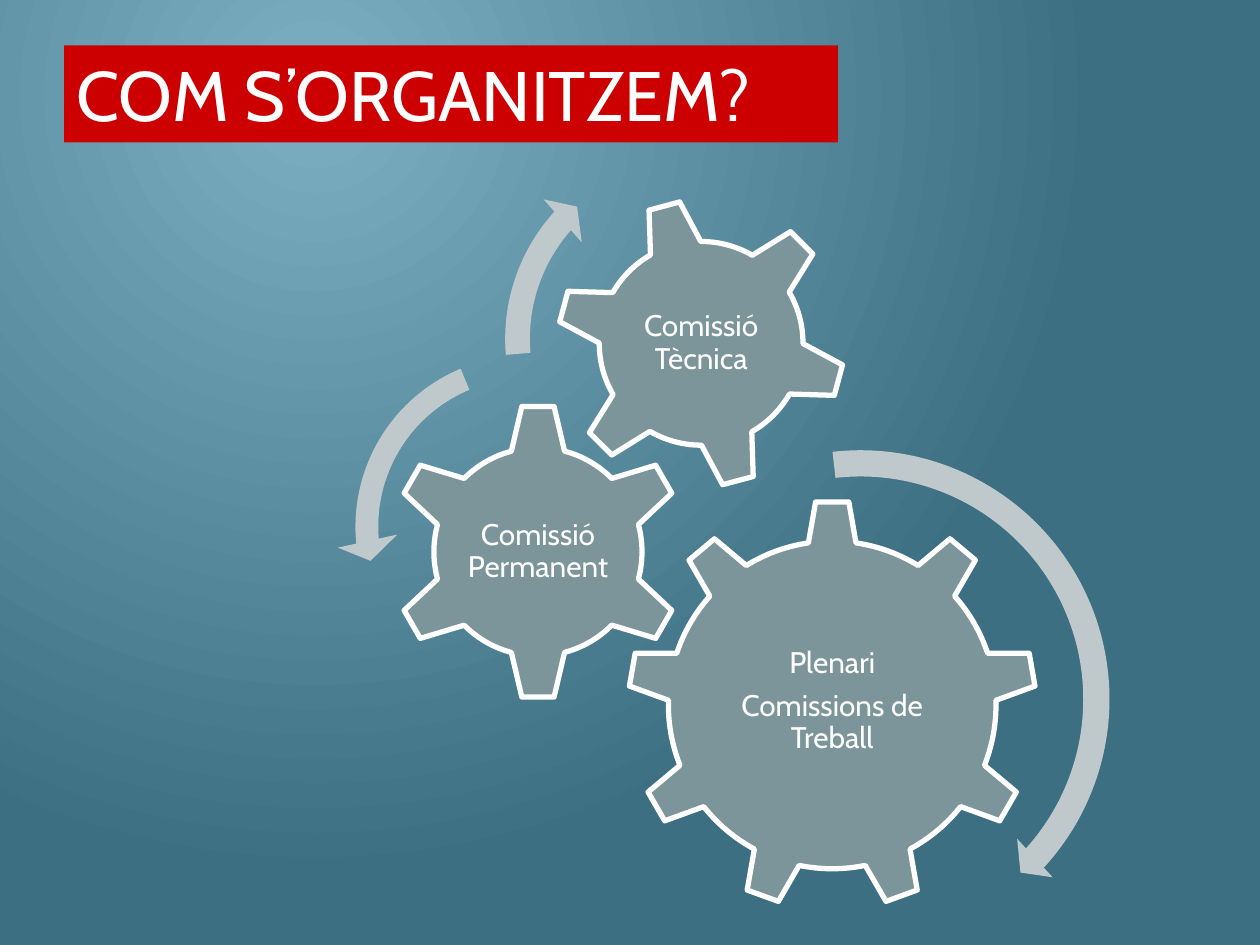
from lxml.etree import SubElement
from pptx import Presentation
from pptx.dml.color import RGBColor
from pptx.enum.shapes import MSO_SHAPE as Shape
from pptx.enum.text import MSO_ANCHOR as Anchor, PP_ALIGN as Align
from pptx.oxml.ns import qn
from pptx.util import Inches, Pt

COLS = 100
WIDTH, HEIGHT = Inches(10), Inches(7.5)
CELL = WIDTH // COLS
WHITE, RED, STEEL, SILVER = "FFFFFF", "CC0000", "7C959A", "BFC8CA"
GEARS = [
    (Shape.GEAR_9, 23.1, 29.1, 32.5, 0, (0.6, 0.51), -0.3, ["Plenari", "Comissions de Treball"]),
    (Shape.GEAR_6, 4.2, 21.4, 23.6, 0, (0.5, 0.5), 0, ["Comissió Permanent"]),
    (Shape.GEAR_6, 17.4, 5.1, 23.1, 345, (0.56, 0.56), 0, ["Comissió Tècnica"]),
]
ARROWS = [
    (Shape.CIRCULAR_ARROW, 20.8, 24.1, 41.6, (0.05, 2.99, 25.39, 158.13, 0.05)),
    (Shape.LEFT_CIRCULAR_ARROW, 0, 16.1, 30.2, (0.06, 4.3, 104.89, 148.38, 0.08)),
    (Shape.CIRCULAR_ARROW, 12.1, 0, 32.6, (0.06, 3.94, 133.14, 105.08, 0.07)),
]


def tint(code):
    """Turn a hex string into a colour."""
    return RGBColor.from_string(code)


def span(*cells):
    """Turn grid cells into slide lengths."""
    return [round(cell * CELL) for cell in cells]


def write(shape, lines, size=17, align=Align.CENTER, anchor=Anchor.MIDDLE,
          inset=None, leading=1.0, after=0):
    """Fill a shape with formatted paragraphs."""
    frame = shape.text_frame
    frame.word_wrap = True
    frame.vertical_anchor = anchor
    if inset is not None:
        frame.margin_left = frame.margin_right = Inches(inset)
        frame.margin_top = frame.margin_bottom = Inches(inset)
    frame.text = "\n".join(lines)
    for para in frame.paragraphs:
        para.alignment = align
        para.line_spacing = leading
        para.space_before, para.space_after = Pt(0), Pt(after)
        font = para.runs[0].font
        font.name, font.size = "Cabin", Pt(size)
        font.color.rgb = tint(WHITE)


def draw(slide, kind, box, fill, line=None):
    """Add a flat preset shape."""
    shape = slide.shapes.add_shape(kind, *span(*box))
    shape.shadow.inherit = False
    shape.fill.solid()
    shape.fill.fore_color.rgb = tint(fill)
    if line:
        shape.line.color.rgb = tint(line)
        shape.line.width = Pt(3)
    else:
        shape.line.fill.background()
    return shape


def backdrop(slide):
    """Paint the radial gradient behind the slide."""
    fill = slide.background.fill
    fill.gradient()
    for stop, code, place in zip(fill.gradient_stops, ("7DAFC3", "3D6F83"), (0, 1)):
        stop.color.rgb = tint(code)
        stop.position = place
    grad = slide.background._cSld.find(".//" + qn("a:gradFill"))
    grad.remove(grad.find(qn("a:lin")))
    ring = SubElement(grad, qn("a:path"), {"path": "circle"})
    SubElement(ring, qn("a:fillToRect"),
               {"l": "50000", "t": "20000", "r": "100000", "b": "100000"})


def heading(slide, box):
    """Place the title on its red band."""
    title = slide.shapes.title
    title.left, title.top, title.width, title.height = span(*box)
    title.fill.solid()
    title.fill.fore_color.rgb = tint(RED)
    write(title, ["COM S’ORGANITZEM?"], size=40, align=Align.LEFT, anchor=Anchor.TOP)


def gears(slide, left, top):
    """Place the gears, their labels and the turning arrows."""
    for kind, x, y, side, turn, (wide, high), shift, lines in GEARS:
        x, y = left + x, top + y
        gear = draw(slide, kind, (x, y, side, side), STEEL, WHITE)
        gear.rotation = turn
        label = slide.shapes.add_textbox(*span(
            x + side * (1 - wide) / 2, y + side * (1 - high) / 2 + shift,
            side * wide, side * high))
        write(label, lines, inset=0.02, leading=0.9, after=6)
    for kind, x, y, side, bends in ARROWS:
        arrow = draw(slide, kind, (left + x, top + y, side, side), SILVER)
        for i, bend in enumerate(bends):
            arrow.adjustments[i] = bend


def main():
    """Build and save the slide."""
    deck = Presentation()
    deck.slide_width, deck.slide_height = WIDTH, HEIGHT
    slide = deck.slides.add_slide(deck.slide_layouts[5])
    backdrop(slide)
    heading(slide, (5.1, 3.6, 61.4, 7.7))
    gears(slide, 26.7, 10.6)
    deck.save("out.pptx")


if __name__ == "__main__":
    main()
